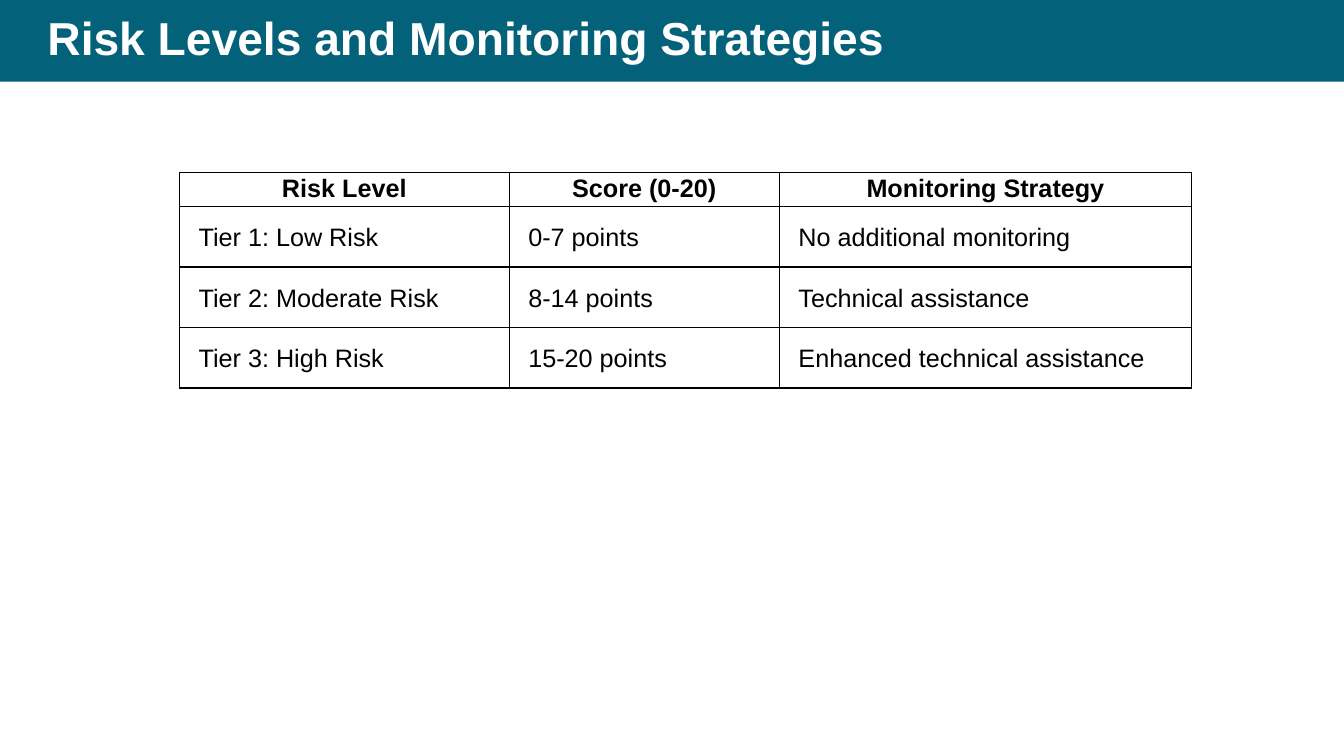
from lxml import etree
from pptx import Presentation
from pptx.dml.color import RGBColor
from pptx.enum.shapes import MSO_SHAPE
from pptx.enum.text import MSO_ANCHOR, PP_ALIGN
from pptx.oxml.ns import qn
from pptx.util import Inches, Pt

TEAL = RGBColor(0x03, 0x61, 0x7A)
WHITE = RGBColor(0xFF, 0xFF, 0xFF)
BLACK = RGBColor(0x00, 0x00, 0x00)
RECTANGLE = MSO_SHAPE.RECTANGLE
TOP, MIDDLE = MSO_ANCHOR.TOP, MSO_ANCHOR.MIDDLE
LEFT, CENTER = PP_ALIGN.LEFT, PP_ALIGN.CENTER

SLIDE_WIDTH, SLIDE_HEIGHT, BAND_HEIGHT = 13.33, 7.5, 0.81
COLUMN_WIDTHS = [3.27, 2.68, 4.09]
ROW_HEIGHTS = [0.34, 0.6, 0.6, 0.6]
RISK_ROWS = [
    ["Risk Level", "Score (0-20)", "Monitoring Strategy"],
    ["Tier 1: Low Risk", "0-7 points", "No additional monitoring"],
    ["Tier 2: Moderate Risk", "8-14 points", "Technical assistance"],
    ["Tier 3: High Risk", "15-20 points", "Enhanced technical assistance"],
]


class SlideBuilder:
    """Holds the text style and the page being filled."""

    font_name = "Arial"

    def __init__(self, page):
        self.page = page

    def style(self, frame, size, color, bold, spacing, align=LEFT):
        paragraph = frame.paragraphs[0]
        paragraph.alignment = align
        paragraph.line_spacing = spacing
        for span in paragraph.runs:
            span.font.name = self.font_name
            span.font.size = Pt(size)
            span.font.bold = bold
            span.font.color.rgb = color

    def title(self, text, left, top, width, height):
        box = self.page.shapes.title
        box.left, box.top = Inches(left), Inches(top)
        box.width, box.height = Inches(width), Inches(height)
        frame = box.text_frame
        frame.text = text
        frame.word_wrap = True
        frame.vertical_anchor = MIDDLE
        self.style(frame, 33, WHITE, True, 0.9)

    def band(self, left, top, width, height, color):
        band = self.page.shapes.add_shape(
            RECTANGLE, Inches(left), Inches(top), Inches(width), Inches(height))
        band.shadow.inherit = False
        band.fill.solid()
        band.fill.fore_color.rgb = color
        band.line.fill.background()
        # Place the band behind the title
        self.page.shapes.title.element.addprevious(band.element)

    def borders(self, cell, color, width):
        properties = cell._tc.get_or_add_tcPr()
        for side in ("a:lnL", "a:lnR", "a:lnT", "a:lnB"):
            line = etree.SubElement(properties, qn(side), w=str(Pt(width)))
            fill = etree.SubElement(line, qn("a:solidFill"))
            etree.SubElement(fill, qn("a:srgbClr"), val=str(color))

    def cell(self, cell, text, is_header):
        self.borders(cell, BLACK, 1)
        cell.fill.background()
        cell.margin_left = cell.margin_right = Inches(0.07)
        cell.margin_top = cell.margin_bottom = 0
        cell.vertical_anchor = TOP if is_header else MIDDLE
        frame = cell.text_frame
        frame.text = text
        self.style(frame, 18, BLACK, is_header, 1.07,
                   CENTER if is_header else LEFT)
        if not is_header:
            indent = frame.paragraphs[0]._p.get_or_add_pPr()
            indent.set("marL", str(Inches(0.12)))

    def table(self, rows, left, top, widths, heights):
        table = self.page.shapes.add_table(
            len(rows), len(widths), Inches(left), Inches(top),
            Inches(sum(widths)), Inches(sum(heights))).table
        table.horz_banding = False
        for column, width in zip(table.columns, widths):
            column.width = Inches(width)
        for row, height in zip(table.rows, heights):
            row.height = Inches(height)
        for row_index, texts in enumerate(rows):
            for column_index, text in enumerate(texts):
                self.cell(table.cell(row_index, column_index), text,
                          row_index == 0)


def main():
    deck = Presentation()
    deck.slide_width, deck.slide_height = Inches(SLIDE_WIDTH), Inches(SLIDE_HEIGHT)
    title_only = deck.slide_layouts.get_by_name("Title Only")
    builder = SlideBuilder(deck.slides.add_slide(title_only))

    # Header
    builder.band(0, 0, SLIDE_WIDTH, BAND_HEIGHT, TEAL)
    builder.title("Risk Levels and Monitoring Strategies",
                  0.37, 0, 12.32, BAND_HEIGHT)

    # Risk table
    builder.table(RISK_ROWS, 1.78, 1.71, COLUMN_WIDTHS, ROW_HEIGHTS)

    deck.save("out.pptx")


if __name__ == "__main__":
    main()
